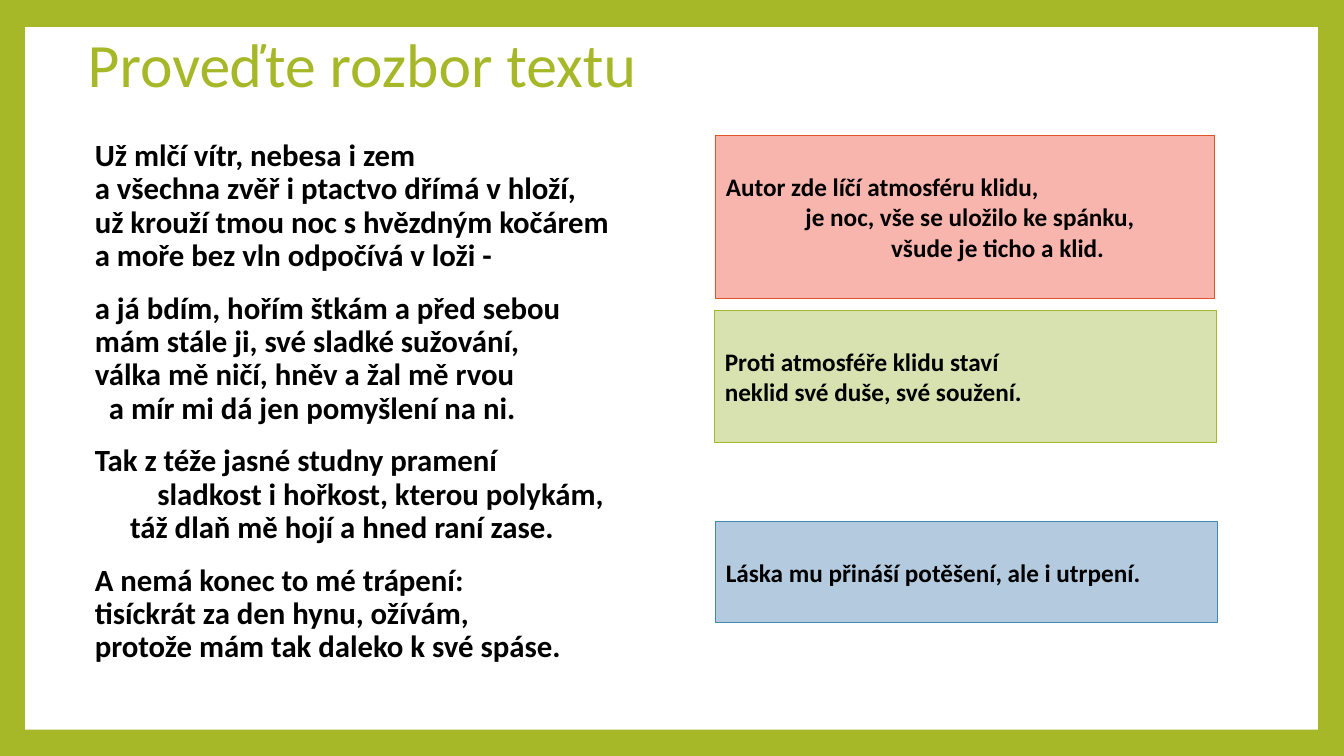
"""Build a slide that pairs a sonnet with three boxed notes on its meaning."""
from pptx import Presentation
from pptx.dml.color import RGBColor
from pptx.enum.shapes import MSO_SHAPE
from pptx.enum.text import MSO_ANCHOR, MSO_AUTO_SIZE, PP_ALIGN
from pptx.oxml.ns import qn
from pptx.util import Inches, Pt

RECTANGLE = MSO_SHAPE.RECTANGLE
TOP, MIDDLE = MSO_ANCHOR.TOP, MSO_ANCHOR.MIDDLE
NO_AUTOFIT = MSO_AUTO_SIZE.NONE
LEFT = PP_ALIGN.LEFT

THEME = {
    "font": "Calibri",
    "green": RGBColor.from_string("A6B727"),
    "white": RGBColor.from_string("FFFFFF"),
    "black": RGBColor.from_string("000000"),
    "calm": (RGBColor.from_string("F7B5AD"), RGBColor.from_string("DF5327")),
    "unrest": (RGBColor.from_string("D8E1B0"), RGBColor.from_string("A6B727")),
    "love": (RGBColor.from_string("B3CADF"), RGBColor.from_string("418AB3")),
    "title_size": Pt(44),
    "poem_size": Pt(22),
    "note_size": Pt(18),
    "outline": Pt(0.79),
}

STANZAS = [
    [("Už mlčí vítr, nebesa i zem", 0.05),
     ("a všechna zvěř i ptactvo dřímá v hloží,", 0.05),
     ("už krouží tmou noc s hvězdným kočárem", 0.05),
     ("a moře bez vln odpočívá v loži -", 0.05)],
    [("a já bdím, hořím štkám a před sebou", 0.05),
     ("mám stále ji, své sladké sužování,", 0.05),
     ("válka mě ničí, hněv a žal mě rvou", 0.05),
     ("a mír mi dá jen pomyšlení na ni.", 0.19)],
    [("Tak z téže jasné studny pramení", 0.05),
     ("sladkost i hořkost, kterou polykám,", 0.67),
     ("táž dlaň mě hojí a hned raní zase.", 0.4)],
    [("A nemá konec to mé trápení:", 0.05),
     ("tisíckrát za den hynu, ožívám,", 0.05),
     ("protože mám tak daleko k své spáse.", 0.05)],
]

NOTES = [
    ("calm", (7.1, 1.34, 4.95, 1.62),
     [("Autor zde líčí atmosféru klidu,", 0),
      ("je noc, vše se uložilo ke spánku,", 0.79),
      ("všude je ticho a klid.", 1.64)]),
    ("unrest", (7.09, 3.08, 4.98, 1.31),
     [("Proti atmosféře klidu staví", 0),
      ("neklid své duše, své soužení.", 0)]),
    ("love", (7.1, 5.17, 4.98, 1.01),
     [("Láska mu přináší potěšení, ale i utrpení.", 0)]),
]


def write_lines(frame, stanzas, font_format, line_spacing, anchor):
    """Write each verse as a paragraph, with a gap before each later stanza."""
    frame.word_wrap = True
    frame.auto_size = NO_AUTOFIT
    frame.vertical_anchor = anchor
    paragraph = frame.paragraphs[0]
    for stanza_number, stanza in enumerate(stanzas):
        for line_number, (line, indent) in enumerate(stanza):
            if stanza_number or line_number:
                paragraph = frame.add_paragraph()
            properties = paragraph._p.get_or_add_pPr()
            properties.set("marL", str(Inches(indent)))
            properties.set("indent", "0")
            properties.append(properties.makeelement(qn("a:buNone"), {}))
            paragraph.alignment = LEFT
            paragraph.line_spacing = line_spacing
            paragraph.space_before = Pt(14 if stanza_number and not line_number else 0)
            verse = paragraph.add_run()
            verse.text = line
            verse.font.color.rgb = font_format["color"]
            for attribute in ("name", "size", "bold"):
                setattr(verse.font, attribute, font_format[attribute])


def place(shape, bounds):
    """Move and size a shape by its bounds in inches."""
    for attribute, length in zip(("left", "top", "width", "height"), bounds):
        setattr(shape, attribute, Inches(length))


presentation = Presentation()
presentation.slide_width = Inches(13.33)
presentation.slide_height = Inches(7.5)
slide = presentation.slides.add_slide(presentation.slide_layouts[1])
slide.background.fill.solid()
slide.background.fill.fore_color.rgb = THEME["green"]

title, poem = slide.placeholders
place(title, (0.77, 0, 11.28, 1.34))
place(poem, (0.79, 1.34, 5.8, 5.31))

page = slide.shapes.add_shape(
    RECTANGLE, Inches(0.25), Inches(0.27), Inches(12.82), Inches(6.97))
page.shadow.inherit = False
page.fill.solid()
page.fill.fore_color.rgb = THEME["white"]
page.line.fill.background()
title.element.addprevious(page.element)

title_format = {"name": THEME["font"], "size": THEME["title_size"],
                "bold": False, "color": THEME["green"]}
poem_format = {"name": THEME["font"], "size": THEME["poem_size"],
               "bold": True, "color": THEME["black"]}
note_format = {**poem_format, "size": THEME["note_size"]}

write_lines(title.text_frame, [[("Proveďte rozbor textu", 0)]], title_format, 0.9, MIDDLE)
write_lines(poem.text_frame, STANZAS, poem_format, 0.9, TOP)

for mood, bounds, lines in NOTES:
    note = slide.shapes.add_shape(RECTANGLE, *map(Inches, bounds))
    fill_color, outline_color = THEME[mood]
    note.shadow.inherit = False
    note.fill.solid()
    note.fill.fore_color.rgb = fill_color
    note.line.color.rgb = outline_color
    note.line.width = THEME["outline"]
    write_lines(note.text_frame, [lines], note_format, 1.0, MIDDLE)

presentation.save("out.pptx")
